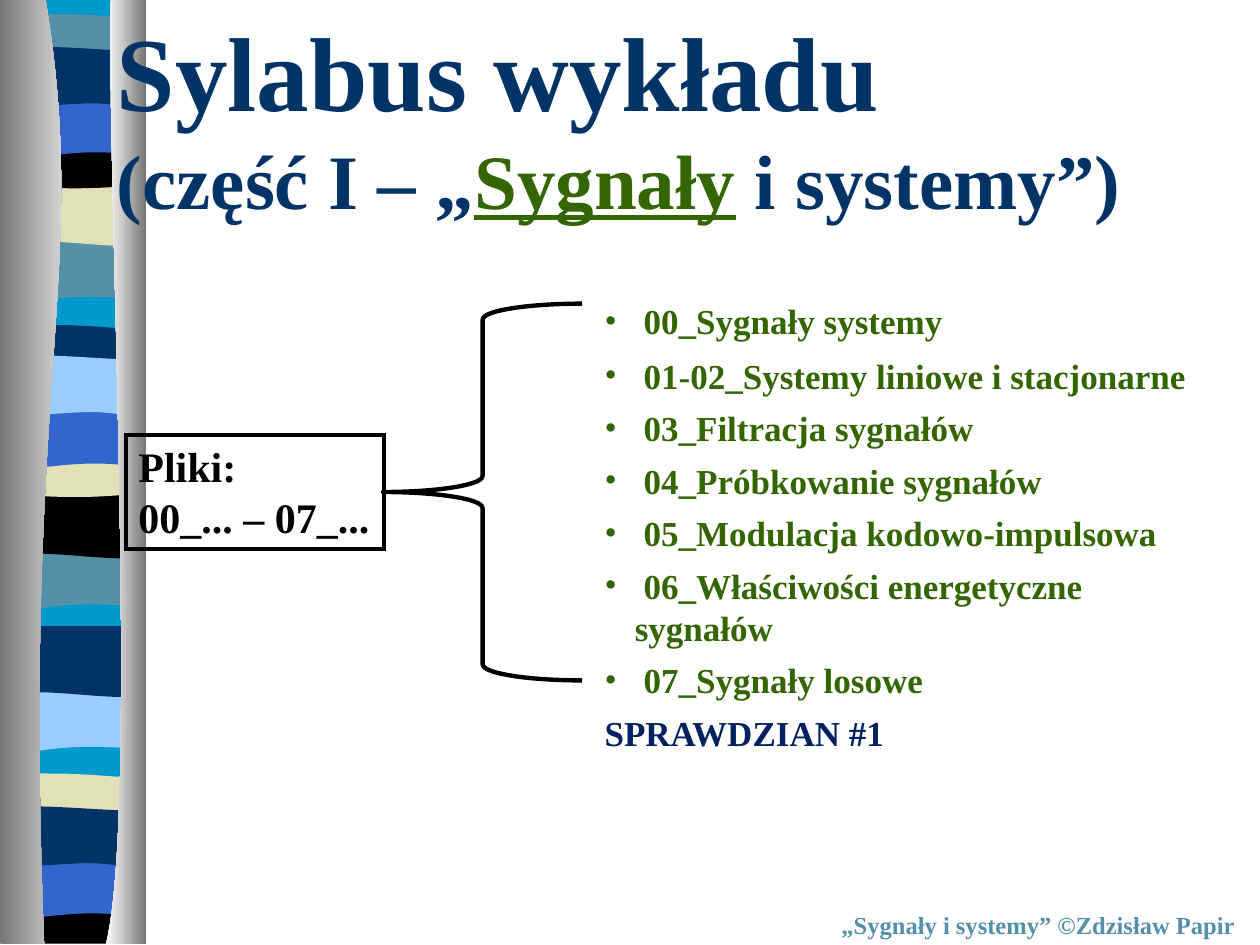
import pptx
import pptx.util
import pptx.dml.color
import pptx.enum.shapes
import pptx.enum.text
import pptx.oxml
import pptx.oxml.ns

PX = 9144
FACE = "Times New Roman"
NAVY, GREEN, TEAL, BLACK = "003366", "336600", "5490A8", "000000"
SKY, SAND, BLUE, AQUA = "99CCFF", "E1E1B7", "3366CC", "0099CC"

WAVES = {
    "dip": [(108, 0), (108, 53), (34, 45, 19, 61, 0, 53), (0, 0)],
    "roll": [(108, 0), (108, 54), (90, 61, 34, 48, 0, 54), (0, 0)],
    "lens": [(108, 0), (108, 34), (90, 38, 18, 38, 0, 34), (0, 0),
             (7, -5, 24, -4, 42, -4), (60, -4, 95, -1, 108, 0)],
    "bowl": [(108, 0), (108, 37), (90, 43, 18, 43, 0, 37), (0, 0),
             (66, 5, 85, 0, 108, 0)],
    "arch": [(108, 0), (108, 53), (91, 48, 84, 48, 66, 48),
             (48, 48, 16, 53, 0, 53), (0, 0)],
    "flag": [(108, 0), (108, 42), (101, 47, 85, 42, 67, 42),
             (49, 42, 11, 47, 0, 42), (0, -1), (15, -6, 74, 0, 92, 0),
             (110, 0, 105, 0, 108, 0)],
    "foot": [(108, 0), (108, 37), (0, 37), (0, 0), (66, 5, 85, 0, 108, 0)],
    "base": [(108, 0), (108, 748), (0, 748), (0, 0)],
}
BANDS = [
    ("base", 6, -1, AQUA),
    ("dip", 5, 185, TEAL), ("roll", 6, 139, SAND), ("lens", 6, 15, TEAL),
    ("bowl", 5, 108, BLACK), ("arch", 6, 73, BLUE), ("flag", 6, 40, NAVY),
    ("dip", 4, 429, TEAL), ("roll", 5, 387, BLACK), ("lens", 5, 262, NAVY),
    ("bowl", 5, 353, SAND), ("arch", 5, 320, BLUE), ("flag", 5, 285, SKY),
    ("dip", 4, 542, SKY), ("roll", 5, 497, NAVY), ("lens", 4, 618, SAND),
    ("foot", 4, 712, BLACK), ("arch", 3, 677, BLUE), ("flag", 3, 643, NAVY),
]
SIDES = [
    ([(36, -1), (72, 216, 17, 296, 35, 749), (0, 749), (0, -1)],
     ("767676", "FFFFFF")),
    ([(88, -1), (84, 125, 111, 646, 84, 749), (116, 749), (116, -1)],
     ("FFFFFF", "767676")),
]
TITLE = [[
    ("Sylabus wykładu\v", 60, NAVY, False),
    ("(część I – „", 44, NAVY, False),
    ("Sygnały", 44, GREEN, True),
    (" i systemy”)", 44, NAVY, False),
]]
FILES = [
    " 00_Sygnały systemy",
    " 01-02_Systemy liniowe i stacjonarne",
    " 03_Filtracja sygnałów",
    " 04_Próbkowanie sygnałów",
    " 05_Modulacja kodowo-impulsowa",
    " 06_Właściwości energetyczne sygnałów",
    " 07_Sygnały losowe",
]
LIST = [[(text, 20, GREEN, False)] for text in FILES]
LIST.append([("SPRAWDZIAN #1", 20, "002060", False)])
FOOTER = [[("„Sygnały i systemy” ©Zdzisław Papir", 14, TEAL, False)]]
LABEL = [[(text, 24, BLACK, False)] for text in ("Pliki:", "00_... – 07_...")]


def tint(code):
    return pptx.dml.color.RGBColor.from_string(code)


def emu(*vals):
    return [round(v * PX) for v in vals]


def node(tag, **attrs):
    space = "http://schemas.openxmlformats.org/drawingml/2006/main"
    item = pptx.oxml.parse_xml(f'<a:{tag} xmlns:a="{space}"/>')
    for key, val in attrs.items():
        item.set(key, val)
    return item


def outline(shapes, segs, left=0, top=0):
    pts = [emu(seg[i] + left, seg[i + 1] + top)
           for seg in segs for i in range(0, len(seg), 2)]
    form = shapes.build_freeform(*pts[0], scale=1.0)
    form.add_line_segments(pts[1:], close=True)
    shape = form.convert_to_shape()
    lines = shape._element.findall(".//" + pptx.oxml.ns.qn("a:lnTo"))
    for seg in segs[1:]:
        used, lines = lines[:len(seg) // 2], lines[len(seg) // 2:]
        if len(used) == 3:
            curve = node("cubicBezTo")
            used[0].addprevious(curve)
            for line in used:
                curve.append(line[0])
                line.getparent().remove(line)
    shape.shadow.inherit = False
    shape.line.fill.background()
    return shape


def write(shape, paras, wrap, gap=0):
    frame = shape.text_frame
    form = {"word_wrap": wrap, "vertical_anchor": pptx.enum.text.MSO_ANCHOR.TOP}
    for key, val in form.items():
        setattr(frame, key, val)
    for i, runs in enumerate(paras):
        para = frame.paragraphs[0] if i == 0 else frame.add_paragraph()
        para.alignment = pptx.enum.text.PP_ALIGN.LEFT
        para.space_before = pptx.util.Pt(gap if i else 0)
        for text, size, color, under in runs:
            run = para.add_run()
            run.text = text.rstrip("\v")
            if text.endswith("\v"):
                para.add_line_break()
            font = {"name": FACE, "size": pptx.util.Pt(size), "bold": True,
                    "underline": under}
            for key, val in font.items():
                setattr(run.font, key, val)
            run.font.color.rgb = tint(color)
    return frame


def bullet(para):
    props = para._p.get_or_add_pPr()
    for key, val in {"marL": 24, "indent": -24}.items():
        props.set(key, str(val * PX))
    props.append(node("buFont", typeface=FACE))
    props.append(node("buChar", char="•"))


def frame(shapes, kind, *box):
    shape = shapes.add_shape(kind, *emu(*box))
    shape.shadow.inherit = False
    shape.fill.background()
    shape.line.color.rgb = tint(BLACK)
    shape.line.width = pptx.util.Pt(2.5)
    return shape


def main():
    deck = pptx.Presentation()
    deck.slide_width, deck.slide_height = emu(1000, 750)
    shapes = deck.slides.add_slide(deck.slide_layouts[6]).shapes

    for wave, left, top, color in BANDS:
        band = outline(shapes, WAVES[wave], left, top)
        band.fill.solid()
        band.fill.fore_color.rgb = tint(color)
    for segs, colors in SIDES:
        fill = outline(shapes, segs).fill
        fill.gradient()
        fill.gradient_angle = 0
        for stop, color in zip(fill.gradient_stops, colors):
            stop.color.rgb = tint(color)

    write(shapes.add_textbox(*emu(83, 0, 817, 185)), TITLE, False)
    body = write(shapes.add_textbox(*emu(470, 233, 506, 350)), LIST, True, 6)
    body.paragraphs[1].space_before = pptx.util.Pt(7)
    for para in body.paragraphs[:len(FILES)]:
        bullet(para)
    write(shapes.add_textbox(*emu(658, 717, 341, 34)), FOOTER, True)

    kinds = pptx.enum.shapes.MSO_SHAPE
    brace = frame(shapes, kinds.LEFT_BRACE, 304, 241, 158, 299)
    brace.adjustments[0] = 0.08
    label = frame(shapes, kinds.RECTANGLE, 100, 345, 205, 91)
    label.line._ln.append(node("miter", lim="800000"))
    write(label, LABEL, False)
    deck.save("out.pptx")


if __name__ == "__main__":
    main()
